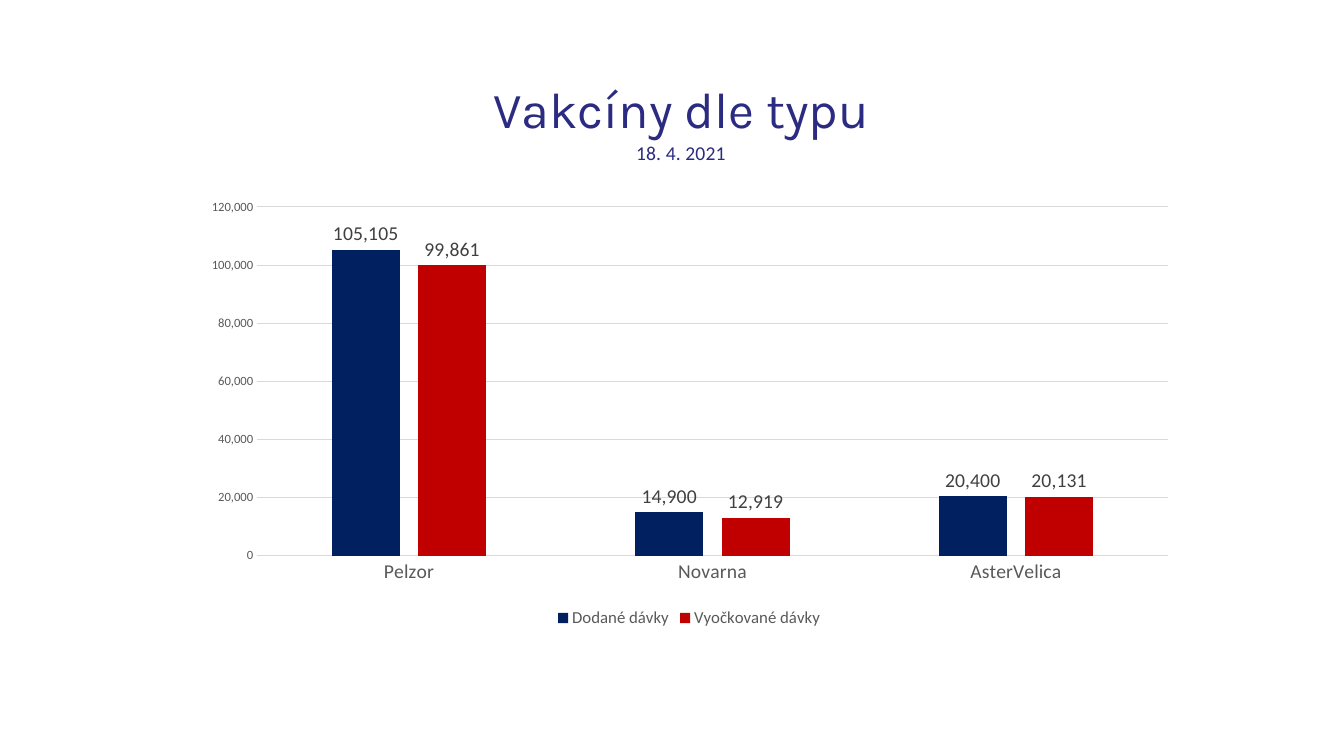
from dataclasses import dataclass

from lxml.etree import SubElement
from pptx import Presentation
from pptx.chart.axis import CategoryAxis, ValueAxis
from pptx.chart.chart import Chart
from pptx.chart.data import CategoryChartData
from pptx.chart.series import BarSeries
from pptx.dml.color import RGBColor
from pptx.enum.chart import (XL_CHART_TYPE, XL_LABEL_POSITION,
                             XL_LEGEND_POSITION, XL_TICK_MARK)
from pptx.enum.text import PP_ALIGN
from pptx.oxml import parse_xml
from pptx.oxml.ns import nsdecls, qn
from pptx.oxml.xmlchemy import BaseOxmlElement
from pptx.text.text import Font
from pptx.util import Inches, Pt

NAVY, RED, TITLE_BLUE = "002060", "C00000", "2B2B82"
GRAY, DARK_GRAY, RULE = "595959", "404040", "D9D9D9"
NUMBER_FORMAT = "#,##0"


@dataclass
class Doses:
    name: str
    counts: tuple[int, ...]
    color: str


@dataclass
class TitleLine:
    text: str
    size: float
    font: str


VACCINES = ("Pelzor", "Novarna", "AsterVelica")
DOSES = (
    Doses("Dodané dávky", (105105, 14900, 20400), NAVY),
    Doses("Vyočkované dávky", (99861, 12919, 20131), RED),
)
TITLE_LINES = (
    TitleLine("Vakcíny dle typu", 36, "Karla"),
    TitleLine("18. 4. 2021", 14, "Calibri"),
)


def rgb(color: str) -> RGBColor:
    return RGBColor.from_string(color)


def style_font(font: Font, size: float, color: str, name: str = "Calibri") -> None:
    font.size = Pt(size)
    font.name = name
    font.bold = False
    font.color.rgb = rgb(color)


def place(parent: BaseOxmlElement, index: int, **fractions: float) -> None:
    """Set a manual layout, in fractions of the chart area."""
    for old_layout in parent.findall(qn("c:layout")):
        parent.remove(old_layout)
    layout = parse_xml(f"<c:layout {nsdecls('c')}><c:manualLayout/></c:layout>")
    manual = layout[0]
    if "w" in fractions:
        SubElement(manual, qn("c:layoutTarget")).set("val", "inner")
    for axis in ("x", "y"):
        SubElement(manual, qn(f"c:{axis}Mode")).set("val", "edge")
    for key, fraction in fractions.items():
        SubElement(manual, qn(f"c:{key}")).set("val", str(fraction))
    parent.insert(index, layout)


def add_title(chart: Chart) -> None:
    chart.has_title = True
    title = chart.chart_title
    frame = title.text_frame
    frame.text = "\n".join(line.text for line in TITLE_LINES)
    for paragraph, line in zip(frame.paragraphs, TITLE_LINES):
        paragraph.alignment = PP_ALIGN.CENTER
        style_font(paragraph.font, line.size, TITLE_BLUE, line.font)
        style_font(paragraph.runs[0].font, line.size, TITLE_BLUE, line.font)
    title.include_in_layout = False
    place(title.element, 1, x=0.3, y=0.04)


def style_axis(axis: CategoryAxis | ValueAxis, size: float) -> None:
    axis.major_tick_mark = axis.minor_tick_mark = XL_TICK_MARK.NONE
    style_font(axis.tick_labels.font, size, GRAY)


def style_series(series: BarSeries, color: str) -> None:
    series.format.fill.solid()
    series.format.fill.fore_color.rgb = rgb(color)
    series.invert_if_negative = False
    labels = series.data_labels
    labels.show_value = True
    labels.position = XL_LABEL_POSITION.OUTSIDE_END
    labels.number_format = NUMBER_FORMAT
    labels.number_format_is_linked = False
    style_font(labels.font, 14, DARK_GRAY)


def main() -> None:
    deck = Presentation()
    deck.slide_width, deck.slide_height = Inches(13.33), Inches(7.5)
    slide = deck.slides.add_slide(deck.slide_layouts[6])

    # Doses by vaccine
    table = CategoryChartData(number_format=NUMBER_FORMAT)
    table.categories = VACCINES
    for doses in DOSES:
        table.add_series(doses.name, doses.counts)
    chart = slide.shapes.add_chart(
        XL_CHART_TYPE.COLUMN_CLUSTERED, Inches(1.9), Inches(0.54),
        Inches(9.87), Inches(5.73), table).chart
    style_font(chart.font, 10, "000000")
    add_title(chart)

    # Columns
    columns = chart.plots[0]
    columns.gap_width, columns.overlap = 219, -27
    columns.vary_by_categories = False
    for series, doses in zip(columns.series, DOSES):
        style_series(series, doses.color)
    plot_area = chart.element.find(f".//{qn('c:plotArea')}")
    place(plot_area, 0, x=0.066, y=0.264, w=0.915, h=0.604)

    # Axes
    style_axis(chart.category_axis, 14)
    style_axis(chart.value_axis, 9)
    chart.value_axis.minimum_scale = 0
    chart.value_axis.maximum_scale = 120000
    chart.value_axis.major_unit = 20000
    chart.value_axis.tick_labels.number_format = NUMBER_FORMAT
    chart.value_axis.tick_labels.number_format_is_linked = False
    chart.value_axis.format.line.fill.background()
    for rule in (chart.category_axis.format.line,
                 chart.value_axis.major_gridlines.format.line):
        rule.color.rgb = rgb(RULE)
        rule.width = Pt(0.75)

    # Legend
    chart.has_legend = True
    chart.legend.position = XL_LEGEND_POSITION.BOTTOM
    chart.legend.include_in_layout = False
    style_font(chart.legend.font, 12, GRAY)

    deck.save("out.pptx")


if __name__ == "__main__":
    main()
